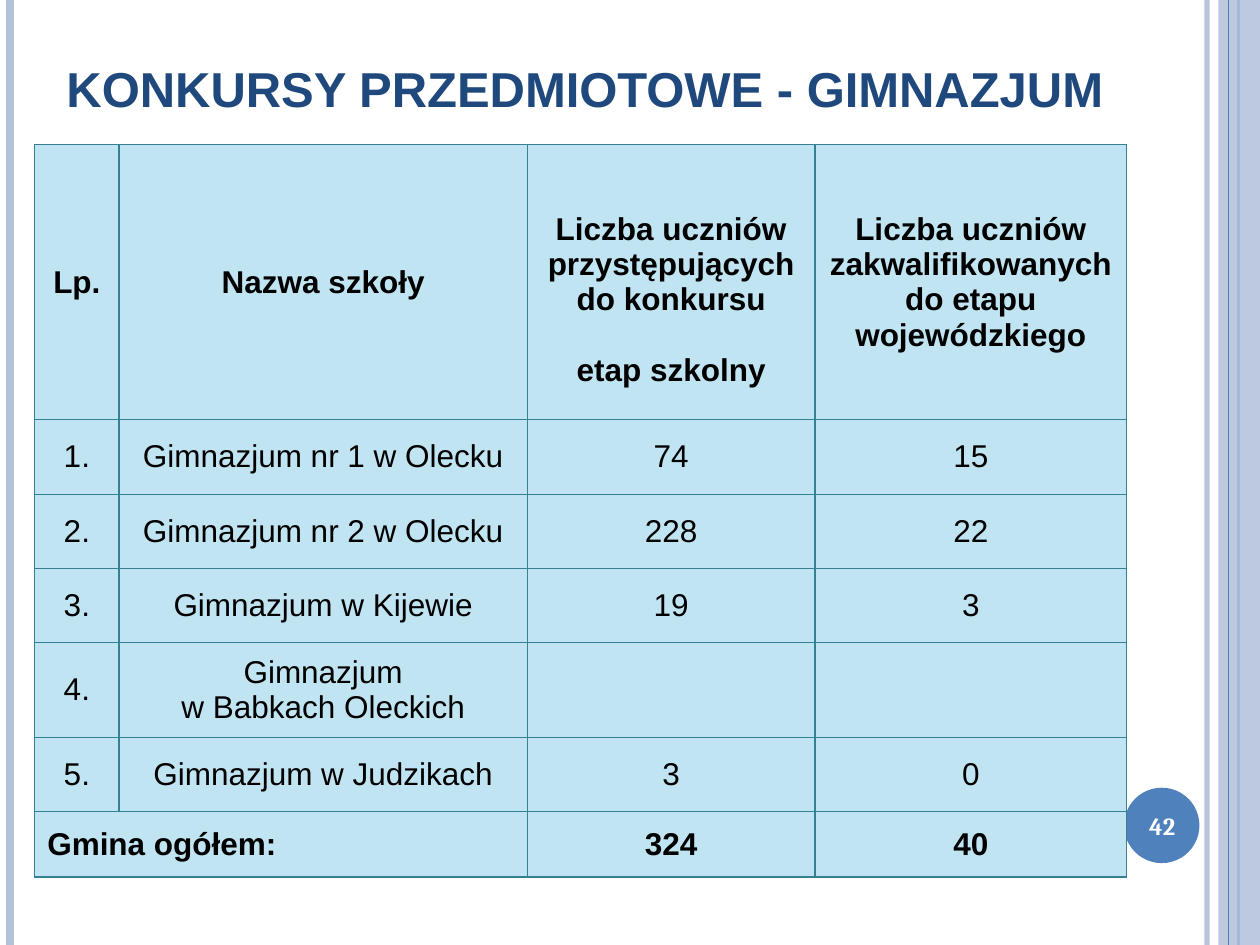
from dataclasses import dataclass

from lxml import etree
from pptx import Presentation
from pptx.dml.color import RGBColor
from pptx.enum.shapes import MSO_CONNECTOR, MSO_SHAPE
from pptx.enum.text import MSO_ANCHOR, PP_ALIGN
from pptx.oxml.ns import qn
from pptx.util import Cm, Pt

STRAIGHT = MSO_CONNECTOR.STRAIGHT
RECTANGLE, OVAL = MSO_SHAPE.RECTANGLE, MSO_SHAPE.OVAL
LEFT, CENTER = PP_ALIGN.LEFT, PP_ALIGN.CENTER
MIDDLE, BOTTOM = MSO_ANCHOR.MIDDLE, MSO_ANCHOR.BOTTOM


@dataclass(frozen=True)
class Theme:
    """Colours, fonts and type sizes of the slide."""
    heading: str = "1F497D"
    accent: str = "4F81BD"
    pale: str = "B3C1DB"
    cell: str = "C0E4F1"
    border: str = "368094"
    ink: str = "000000"
    white: str = "FFFFFF"
    body_font: str = "Arial"
    number_font: str = "Cambria"
    title_size: int = 28
    table_size: int = 18
    number_size: int = 14


THEME = Theme()
WIDTH, HEIGHT = 25.4, 19.05
COLUMNS = (1.7, 8.23, 5.8, 6.28)
ROWS = (5.54, 1.5, 1.5, 1.5, 1.9, 1.5, 1.32)
BLANK_LINE = 0.71
RESULTS = (
    ("Lp.", "Nazwa szkoły", "Liczba uczniów przystępujących\ndo konkursu\netap szkolny",
     "Liczba uczniów zakwalifikowanych do etapu wojewódzkiego"),
    ("1.", "Gimnazjum nr 1 w Olecku", "74", "15"),
    ("2.", "Gimnazjum nr 2 w Olecku", "228", "22"),
    ("3.", "Gimnazjum w Kijewie", "19", "3"),
    ("4.", "Gimnazjum\nw Babkach Oleckich", "", ""),
    ("5.", "Gimnazjum w Judzikach", "3", "0"),
    ("Gmina ogółem:", "", "324", "40"),
)


def write(frame, text, align, color, **font_format):
    """Fill a text frame, one paragraph per line of text."""
    frame.text = text
    for paragraph in frame.paragraphs:
        paragraph.alignment = align
        paragraph.font.color.rgb = RGBColor.from_string(color)
        for run in paragraph.runs:
            run.font.color.rgb = RGBColor.from_string(color)
            for name, value in font_format.items():
                setattr(run.font, name, value)


def set_alpha(properties, percent):
    """Make the colour inside a shape's properties translucent."""
    color = next(properties.iter(qn("a:srgbClr")))
    etree.SubElement(color, qn("a:alpha"), val=str(percent * 1000))


def add_rule(slide, x, color, weight, alpha=100):
    """Draw a vertical rule over the full slide height."""
    rule = slide.shapes.add_connector(STRAIGHT, Cm(x), 0, Cm(x), Cm(HEIGHT))
    rule.line.color.rgb = RGBColor.from_string(color)
    rule.line.width = Pt(weight)
    properties = rule._element.spPr
    if alpha < 100:
        set_alpha(properties, alpha)
    etree.SubElement(properties, qn("a:effectLst"))


def add_block(slide, kind, box, color, alpha=100):
    """Draw a plain filled shape without outline."""
    block = slide.shapes.add_shape(kind, *map(Cm, box))
    block.shadow.inherit = False
    block.fill.solid()
    block.fill.fore_color.rgb = RGBColor.from_string(color)
    block.line.fill.background()
    if alpha < 100:
        set_alpha(block._element.spPr, alpha)


def add_label(slide, box, anchor, text, align, color, **font_format):
    """Add a wrapped text box."""
    frame = slide.shapes.add_textbox(*map(Cm, box)).text_frame
    frame.word_wrap = True
    frame.vertical_anchor = anchor
    write(frame, text, align, color, **font_format)


def style_cell(cell):
    """Give a table cell its fill and thin borders."""
    cell.vertical_anchor = MIDDLE
    cell.fill.solid()
    cell.fill.fore_color.rgb = RGBColor.from_string(THEME.cell)
    properties = cell._tc.get_or_add_tcPr()
    for position, side in enumerate(("lnL", "lnR", "lnT", "lnB")):
        border = etree.Element(qn(f"a:{side}"), w=str(Pt(0.75)))
        fill = etree.SubElement(border, qn("a:solidFill"))
        etree.SubElement(fill, qn("a:srgbClr"), val=THEME.border)
        properties.insert(position, border)


def add_results(slide):
    """Add the table of contest results."""
    table = slide.shapes.add_table(
        len(ROWS), len(COLUMNS), Cm(0.7), Cm(2.92), Cm(sum(COLUMNS)), Cm(sum(ROWS))).table
    for column, width in zip(table.columns, COLUMNS):
        column.width = Cm(width)
    for row, height in zip(table.rows, ROWS):
        row.height = Cm(height)
    last = len(ROWS) - 1
    for r, values in enumerate(RESULTS):
        for c, value in enumerate(values):
            cell = table.cell(r, c)
            style_cell(cell)
            write(cell.text_frame, value, LEFT if (r, c) == (last, 0) else CENTER, THEME.ink,
                  name=THEME.body_font, size=Pt(THEME.table_size), bold=r in (0, last))
    table.cell(last, 0).merge(table.cell(last, 1))
    entrants = table.cell(0, 2)
    entrants.margin_top = Cm(0.13 + BLANK_LINE)
    entrants.text_frame.paragraphs[-1].space_before = Cm(BLANK_LINE)


def main():
    """Build and save the slide."""
    deck = Presentation()
    deck.slide_width, deck.slide_height = Cm(WIDTH), Cm(HEIGHT)
    slide = deck.slides.add_slide(deck.slide_layouts[6])
    add_rule(slide, 24.33, THEME.pale, 3, 93)
    add_rule(slide, 0.21, THEME.pale, 4.5)
    add_rule(slide, 24.97, THEME.accent, 1.5)
    add_block(slide, RECTANGLE, (24.56, 0, 0.84, HEIGHT), THEME.pale, 87)
    add_rule(slide, 24.77, THEME.accent, 0.75)
    add_block(slide, OVAL, (22.66, 15.88, 1.52, 1.52), THEME.accent)
    add_label(slide, (1.09, 0.53, 22.23, 1.96), BOTTOM, "KONKURSY PRZEDMIOTOWE - GIMNAZJUM",
              LEFT, THEME.heading, name=THEME.body_font, size=Pt(THEME.title_size), bold=True)
    add_results(slide)
    add_label(slide, (22.58, 15.93, 1.7, 1.45), MIDDLE, "42", CENTER, THEME.white,
              name=THEME.number_font, size=Pt(THEME.number_size), bold=True)
    deck.save("out.pptx")


if __name__ == "__main__":
    main()
